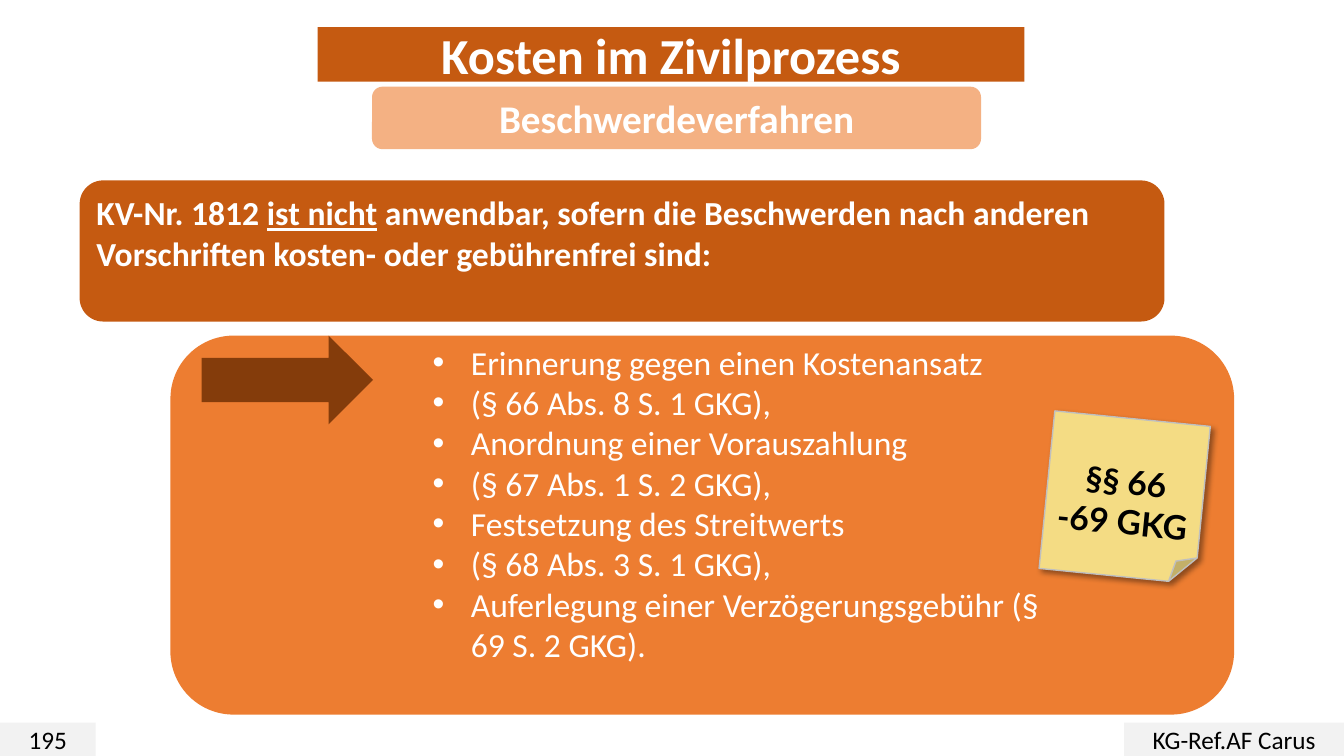
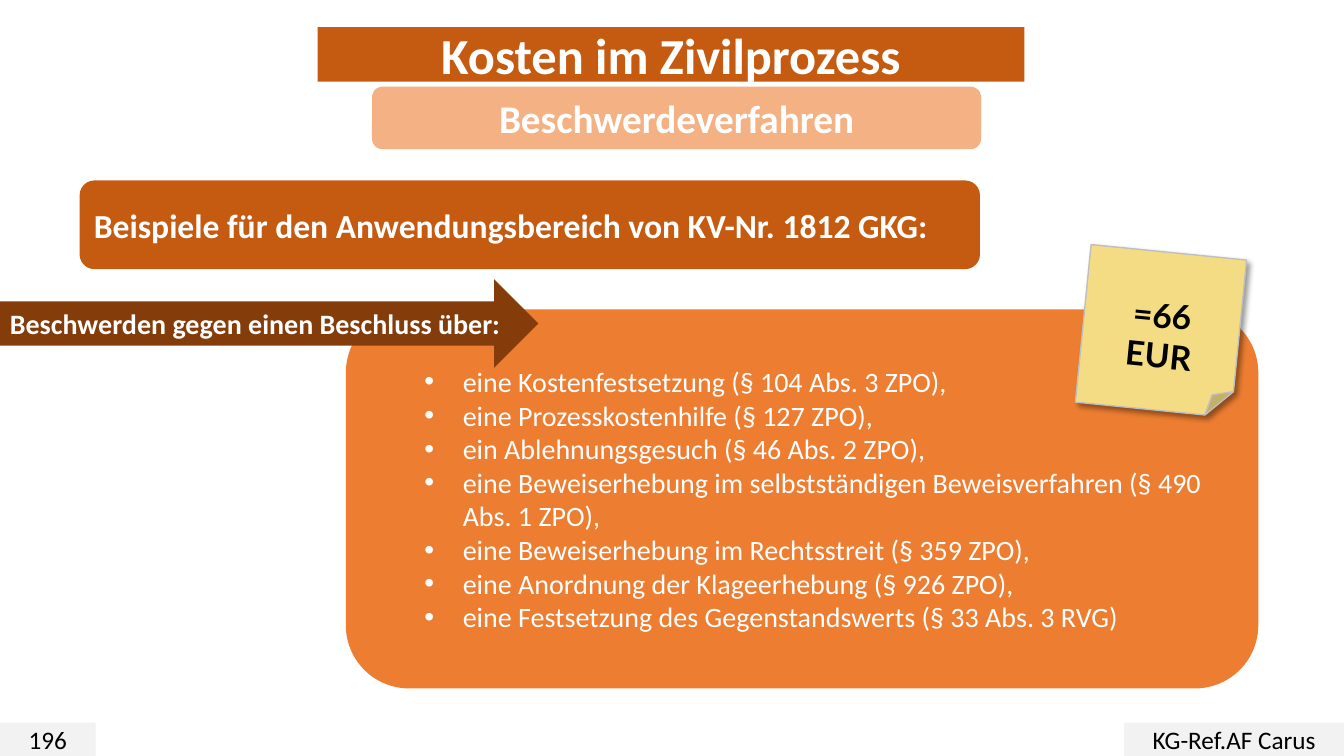
import pptx
import pptx.dml.color
import pptx.enum.shapes
import pptx.enum.text
import pptx.oxml
import pptx.oxml.ns
import pptx.util

Inches = pptx.util.Inches
Pt = pptx.util.Pt
SHAPE = pptx.enum.shapes.MSO_SHAPE
ALIGN = pptx.enum.text.PP_ALIGN
ANCHOR = pptx.enum.text.MSO_ANCHOR

RUST = "C55A11"
PEACH = "F4B183"
ORANGE = "ED7D31"
BROWN = "843C0B"
NOTE_YELLOW = "F4DC84"
NOTE_BORDER = "BFBFBF"
FOOTER_GREY = "F2F2F2"
WHITE = "FFFFFF"
BLACK = "000000"


def rgb(value):
    return pptx.dml.color.RGBColor.from_string(value)


def place(shape, left, top, width, height):
    shape.left, shape.top = Inches(left), Inches(top)
    shape.width, shape.height = Inches(width), Inches(height)


def paint(shape, color):
    shape.fill.solid()
    shape.fill.fore_color.rgb = rgb(color)


def add_block(slide, kind, box, color):
    shape = slide.shapes.add_shape(kind, *[Inches(length) for length in box])
    shape.shadow.inherit = False
    paint(shape, color)
    shape.line.fill.background()
    return shape


def write(shape, paragraphs, size, color=WHITE, bold=False, align=ALIGN.LEFT,
          anchor=ANCHOR.MIDDLE, font="Calibri"):
    frame = shape.text_frame
    frame.word_wrap = True
    frame.auto_size = pptx.enum.text.MSO_AUTO_SIZE.NONE
    frame.vertical_anchor = anchor
    for index, runs in enumerate(paragraphs):
        paragraph = frame.add_paragraph() if index else frame.paragraphs[0]
        paragraph.alignment = align
        paragraph.space_before = Pt(0)
        for text, underline in runs:
            run = paragraph.add_run()
            run.text = text
            run.font.name = font
            run.font.size = Pt(size)
            run.font.bold = bold
            run.font.underline = underline
            run.font.color.rgb = rgb(color)


def plain(*lines):
    return [[(line, False)] for line in lines]


def set_title(slide, text):
    title = slide.shapes.title
    place(title, 3.15, 0.27, 7.01, 0.54)
    title.element.spPr.insert(1, pptx.oxml.parse_xml(
        f'<a:prstGeom {pptx.oxml.ns.nsdecls("a")} prst="roundRect"><a:avLst/></a:prstGeom>'))
    paint(title, RUST)
    write(title, plain(text), 36, bold=True, align=ALIGN.CENTER)


def add_footer_box(slide, left, width, text):
    box = add_block(slide, SHAPE.RECTANGLE, (left, 7.17, width, 0.33), FOOTER_GREY)
    write(box, plain(text), 18, BLACK, align=ALIGN.CENTER)


def add_framed_slide(presentation, number):
    slide = presentation.slides.add_slide(presentation.slide_layouts[1])
    add_footer_box(slide, 0, 0.95, str(number))
    add_footer_box(slide, 11.15, 2.18, "KG-Ref.AF Carus")
    set_title(slide, "Kosten im Zivilprozess")
    subtitle = add_block(slide, SHAPE.ROUNDED_RECTANGLE, (3.69, 0.86, 6.04, 0.62), PEACH)
    write(subtitle, plain("Beschwerdeverfahren"), 28, bold=True, align=ALIGN.CENTER)
    return slide


def add_banner(slide, width, height, runs, anchor):
    banner = add_block(slide, SHAPE.ROUNDED_RECTANGLE, (0.79, 1.79, width, height), RUST)
    write(banner, [runs], 24, bold=True, anchor=anchor)


def add_panel(slide, box):
    add_block(slide, SHAPE.ROUNDED_RECTANGLE, box, ORANGE)


def set_bullets(slide, box, items, size, anchor):
    body = slide.placeholders[1]
    place(body, *box)
    write(body, plain(*items), size, anchor=anchor)
    for paragraph in body.text_frame.paragraphs:
        properties = paragraph._p.get_or_add_pPr()
        properties.set("marL", str(Inches(0.88)))
        properties.set("indent", str(Inches(-0.38)))
        properties.append(pptx.oxml.parse_xml(
            f'<a:buChar {pptx.oxml.ns.nsdecls("a")} char="•"/>'))
    body.element.getparent().append(body.element)


def add_note(slide, left, top, *lines):
    note = add_block(slide, SHAPE.FOLDED_CORNER, (left, top, 1.55, 1.57), NOTE_YELLOW)
    note.rotation = 5.7
    note.line.color.rgb = rgb(NOTE_BORDER)
    note.line.width = Pt(1)
    effects = note.element.spPr.find(pptx.oxml.ns.qn("a:effectLst"))
    effects.append(pptx.oxml.parse_xml(
        f'<a:outerShdw {pptx.oxml.ns.nsdecls("a")} blurRad="{Pt(4)}" dist="{Pt(3)}" '
        f'dir="2700000" algn="tl" rotWithShape="0"><a:srgbClr val="{BLACK}">'
        '<a:alpha val="40000"/></a:srgbClr></a:outerShdw>'))
    write(note, plain(*lines), 24, BLACK, bold=True, align=ALIGN.CENTER, font="Lato")
    note.text_frame.margin_top = Inches(0.38)


def build_exemptions(presentation):
    slide = add_framed_slide(presentation, 195)
    add_banner(slide, 10.76, 1.4, [
        ("KV-Nr. 1812 ", False),
        ("ist nicht", True),
        (" anwendbar, sofern die Beschwerden nach anderen Vorschriften "
         "kosten- oder gebührenfrei sind:", False),
    ], ANCHOR.TOP)
    add_panel(slide, (1.69, 3.33, 10.55, 3.76))
    add_block(slide, SHAPE.RIGHT_ARROW, (2, 3.33, 1.7, 0.88), BROWN)
    set_bullets(slide, (3.69, 3.34, 7.09, 3.33), [
        "Erinnerung gegen einen Kostenansatz",
        "(§ 66 Abs. 8 S. 1 GKG),",
        "Anordnung einer Vorauszahlung",
        "(§ 67 Abs. 1 S. 2 GKG),",
        "Festsetzung des Streitwerts",
        "(§ 68 Abs. 3 S. 1 GKG),",
        "Auferlegung einer Verzögerungsgebühr (§ 69 S. 2 GKG).",
    ], 24, ANCHOR.TOP)
    add_note(slide, 10.38, 4.15, "§§ 66 -69 GKG")


def build_examples(presentation):
    slide = add_framed_slide(presentation, 196)
    add_banner(slide, 8.93, 0.88, [
        ("Beispiele für den Anwendungsbereich von KV-Nr. 1812 GKG:", False),
    ], ANCHOR.MIDDLE)
    add_panel(slide, (3.43, 3.07, 9.05, 3.76))
    set_bullets(slide, (3.61, 3.07, 8.69, 3.76), [
        "eine Kostenfestsetzung (§ 104 Abs. 3 ZPO),",
        "eine Prozesskostenhilfe (§ 127 ZPO),",
        "ein Ablehnungsgesuch (§ 46 Abs. 2 ZPO),",
        "eine Beweiserhebung im selbstständigen Beweisverfahren (§ 490 Abs. 1 ZPO),",
        "eine Beweiserhebung im Rechtsstreit (§ 359 ZPO),",
        "eine Anordnung der Klageerhebung (§ 926 ZPO),",
        "eine Festsetzung des Gegenstandswerts (§ 33 Abs. 3 RVG)",
    ], 20, ANCHOR.MIDDLE)
    arrow = add_block(slide, SHAPE.RIGHT_ARROW, (0, 2.77, 5.34, 0.88), BROWN)
    write(arrow, plain("Beschwerden gegen einen Beschluss über:"), 20, bold=True)
    arrow.text_frame.margin_right = 0
    add_note(slide, 10.74, 2.5, "=66", "EUR")


def main():
    presentation = pptx.Presentation()
    presentation.slide_width = Inches(13.33)
    presentation.slide_height = Inches(7.5)
    build_exemptions(presentation)
    build_examples(presentation)
    presentation.save("out.pptx")


if __name__ == "__main__":
    main()
